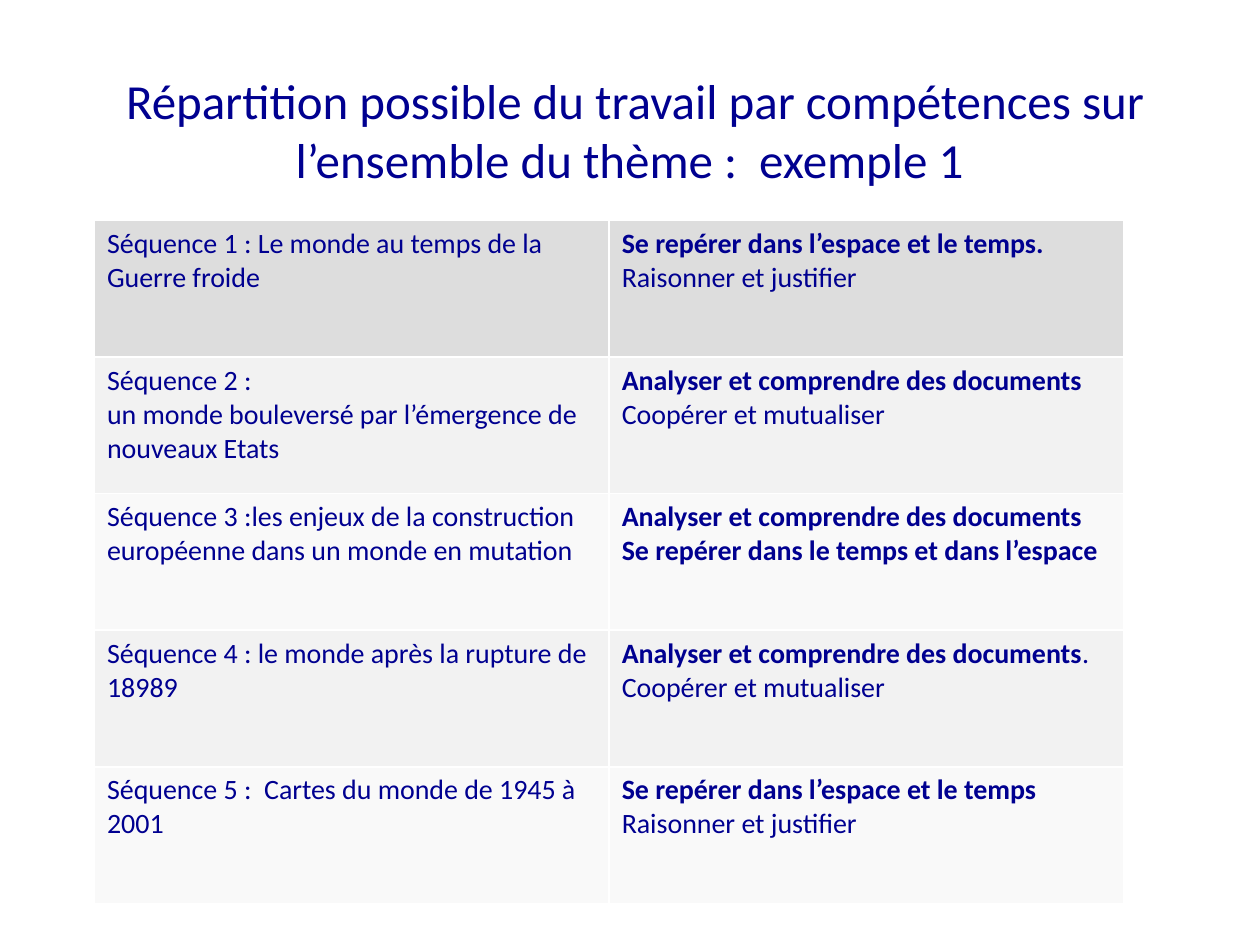
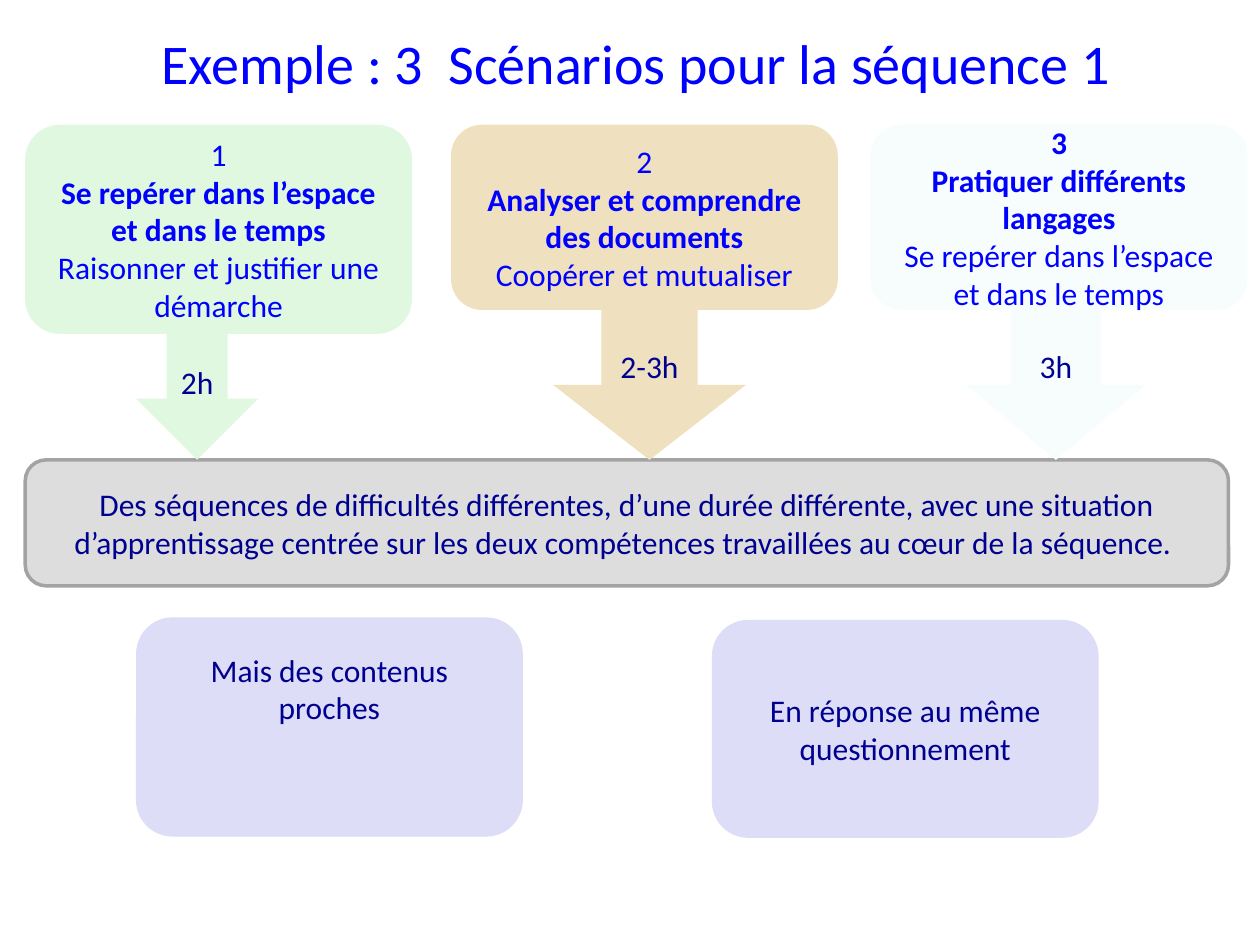
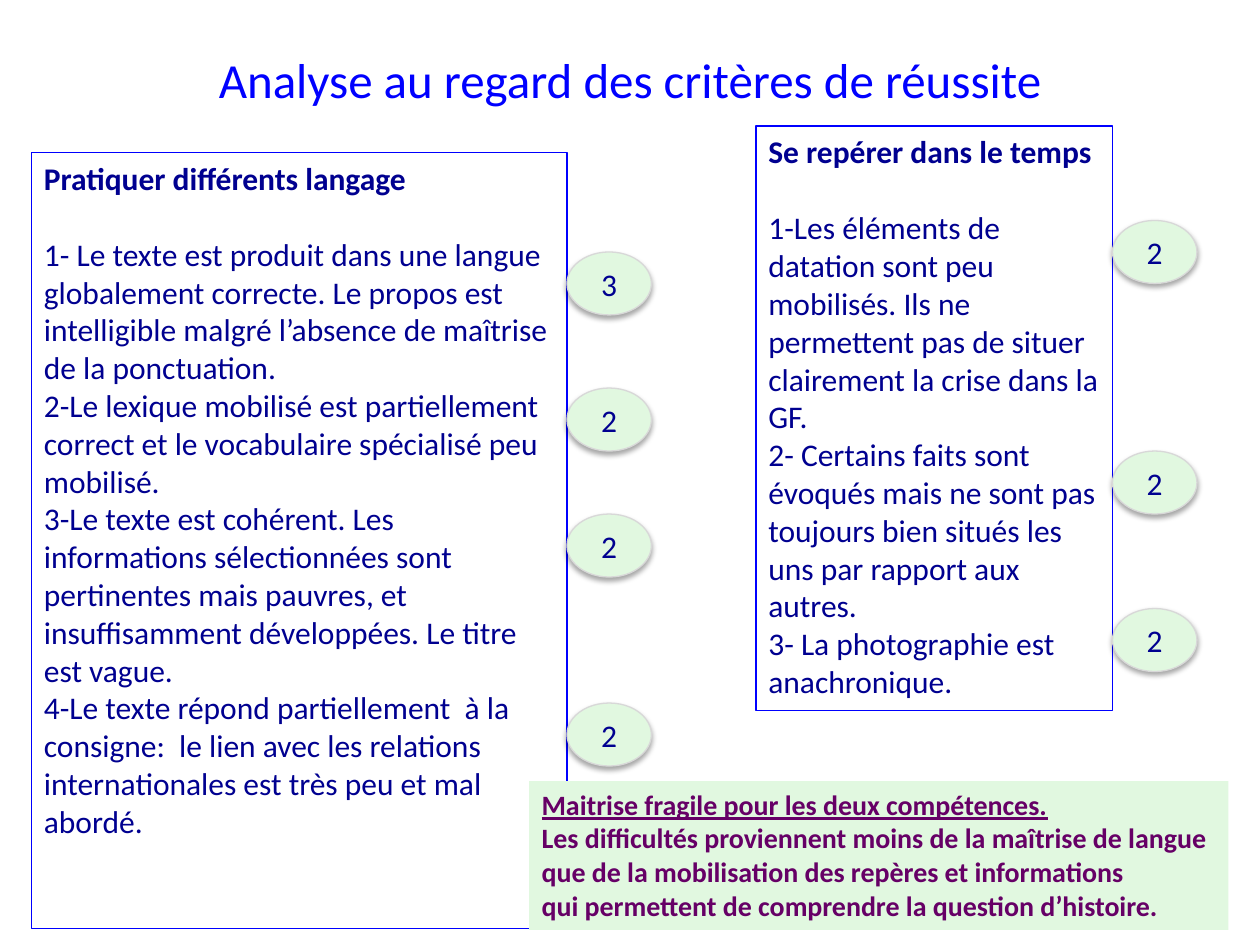
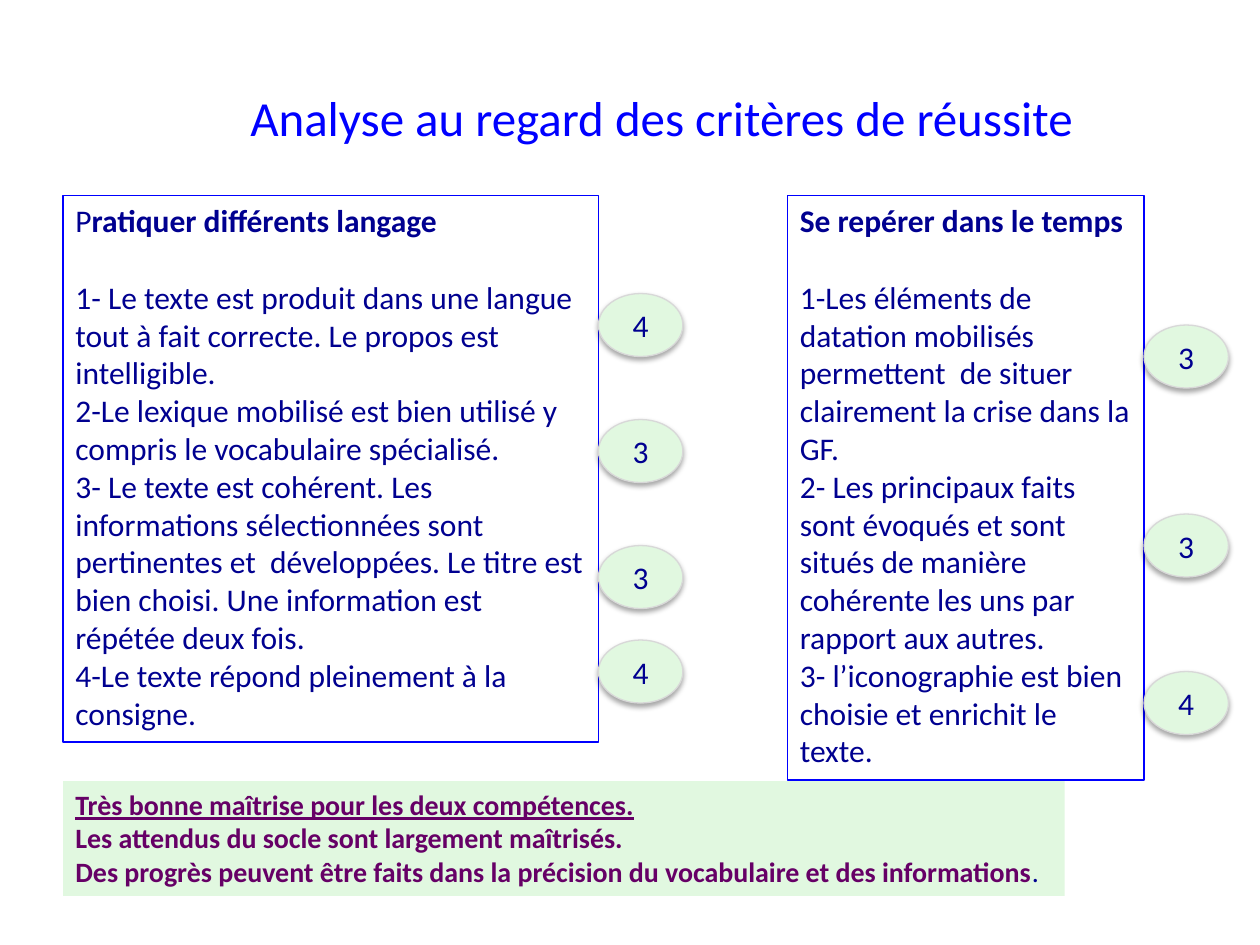
from lxml import etree
from pptx import Presentation
from pptx.dml.color import RGBColor
from pptx.enum.shapes import MSO_SHAPE
from pptx.enum.text import MSO_ANCHOR, MSO_AUTO_SIZE, PP_ALIGN
from pptx.oxml.ns import qn
from pptx.util import Inches, Pt

LEFT, CENTER = PP_ALIGN.LEFT, PP_ALIGN.CENTER
TOP, MIDDLE = MSO_ANCHOR.TOP, MSO_ANCHOR.MIDDLE
FIT_TEXT = MSO_AUTO_SIZE.SHAPE_TO_FIT_TEXT
ROUNDED, ARROW, OVAL = MSO_SHAPE.ROUNDED_RECTANGLE, MSO_SHAPE.DOWN_ARROW, MSO_SHAPE.OVAL

NAVY = RGBColor(0x00, 0x00, 0x90)
BLUE = RGBColor(0x00, 0x00, 0xFF)
PURPLE = RGBColor(0x66, 0x00, 0x66)
GREEN = RGBColor(0xE1, 0xF8, 0xE0)
SAND = RGBColor(0xEF, 0xE1, 0xBF)
ICE = RGBColor(0xF7, 0xFD, 0xFD)
LILAC = RGBColor(0xDD, 0xDD, 0xF7)
SILVER = RGBColor(0xDD, 0xDD, 0xDD)
GRAY = RGBColor(0xA3, 0xA3, 0xA3)
PALE_GRAY = RGBColor(0xD8, 0xD8, 0xD8)
ROW_DARK = RGBColor(0xF2, 0xF2, 0xF2)
ROW_LIGHT = RGBColor(0xF9, 0xF9, 0xF9)

BODY = {"name": "Calibri", "size": Pt(18), "bold": False, "color": NAVY}
TITLE = BODY | {"size": Pt(28), "color": BLUE}
CARD = BODY | {"color": BLUE}
CELL = BODY | {"size": Pt(16)}
VERDICT = CELL | {"bold": True, "color": PURPLE}
BOLD = {"bold": True}
HEADING_GAP = Pt(22)


def bold(text):
    return [(text, BOLD)]


# Shared text and shape helpers
def write(frame, paragraphs, base, align=LEFT):
    """Fill a frame; a paragraph is a string or a list of (text, changes) runs."""
    for index, content in enumerate(paragraphs):
        paragraph = frame.paragraphs[0] if index == 0 else frame.add_paragraph()
        paragraph.alignment = align
        runs = [(content, {})] if isinstance(content, str) else content
        for text, changes in runs:
            run = paragraph.add_run()
            run.text = text
            for key, value in (base | changes).items():
                if key == "color":
                    run.font.color.rgb = value
                else:
                    setattr(run.font, key, value)


def set_line(line, color, width):
    line.color.rgb = color
    line.width = Pt(width)


def add_text(slide, box, paragraphs, base, align=LEFT, anchor=TOP):
    text_box = slide.shapes.add_textbox(*map(Inches, box))
    frame = text_box.text_frame
    for key, value in {"word_wrap": True, "vertical_anchor": anchor}.items():
        setattr(frame, key, value)
    write(frame, paragraphs, base, align)
    return text_box


def add_block(slide, kind, box, fill, paragraphs, base=BODY):
    block = slide.shapes.add_shape(kind, *map(Inches, box))
    block.shadow.inherit = False
    block.fill.solid()
    block.fill.fore_color.rgb = fill
    block.line.fill.background()
    block.text_frame.word_wrap = True
    block.text_frame.vertical_anchor = MIDDLE
    write(block.text_frame, paragraphs, base, CENTER)
    return block


def add_soft_shadow(shape):
    effects = shape._element.spPr.find(qn("a:effectLst"))
    shadow = etree.SubElement(effects, qn("a:outerShdw"), blurRad=str(Pt(3.1)),
                              dist=str(Pt(1.8)), dir="5400000", rotWithShape="0")
    color = etree.SubElement(shadow, qn("a:srgbClr"), val="000000")
    etree.SubElement(color, qn("a:alpha"), val="35000")


def add_title(slide, box, text, **changes):
    add_text(slide, box, [text], TITLE | changes, CENTER, MIDDLE)


# Slide 1: sequences and skills
def add_sequence_table(slide, box, rows):
    grid = slide.shapes.add_table(len(rows), 2, *map(Inches, box)).table
    for index, row in enumerate(rows):
        grid.rows[index].height = Inches(box[3] / len(rows))
        fill = SILVER if index == 0 else (ROW_LIGHT, ROW_DARK)[index % 2]
        for column, paragraphs in enumerate(row):
            cell = grid.cell(index, column)
            cell.fill.solid()
            cell.fill.fore_color.rgb = fill
            write(cell.text_frame, paragraphs, CELL)


def build_sequences(slide):
    add_title(slide, (0.25, 0.3, 9.58, 1.45),
              "Répartition possible du travail par compétences sur "
              "l’ensemble du thème :  exemple 1 ", color=NAVY)
    documents = "Analyser et comprendre des documents"
    add_sequence_table(slide, (0.75, 1.75, 8.17, 5.42), [
        (["Séquence 1 : Le monde au temps de la Guerre froide"],
         [bold("Se repérer dans l’espace et le temps."), "Raisonner et justifier"]),
        (["Séquence 2 :", "un monde bouleversé par l’émergence de nouveaux Etats"],
         [bold(documents), "Coopérer et mutualiser"]),
        (["Séquence 3 :les enjeux de la construction européenne dans un monde en mutation"],
         [bold(documents), bold("Se repérer dans le temps et dans l’espace")]),
        (["Séquence 4 : le monde après la rupture de 18989"],
         [[(documents, BOLD), (".", {})], "Coopérer et mutualiser"]),
        (["Séquence 5 :  Cartes du monde de 1945 à 2001"],
         [bold("Se repérer dans l’espace et le temps"), "Raisonner et justifier"]),
    ])


# Slide 2: three scenarios leading to one summary
def add_scenario(slide, box, fill, skills, duration, arrow_left, arrow_width, arrow_end):
    left, top, _, height = box
    add_block(slide, ROUNDED, box, fill, skills, CARD)
    bottom = top + height
    add_block(slide, ARROW, (left + arrow_left, bottom, arrow_width, arrow_end - bottom),
              fill, [duration])


def build_scenarios(slide):
    add_title(slide, (0.5, 0, 9, 0.99), " Exemple : 3  Scénarios pour la séquence 1",
              size=Pt(32))
    card_top, summary_top = 0.99, 3.65
    space = "Se repérer dans l’espace et dans le temps"
    summary = add_block(slide, ROUNDED, (0.2, summary_top, 9.55, 1), SILVER, [
        "Des séquences de difficultés différentes, d’une durée différente, avec une "
        "situation d’apprentissage centrée sur les deux compétences travaillées au "
        "cœur de la séquence. "])
    set_line(summary.line, GRAY, 2)

    scenarios = [
        ((0.2, card_top, 3.07, 1.66), GREEN,
         ["1", bold(space), "Raisonner et justifier une démarche"], "2h", 0.88, 0.97),
        ((3.58, card_top, 3.07, 1.47), SAND,
         ["2", bold("Analyser et comprendre des documents"), "Coopérer et mutualiser"],
         "2-3h", 0.81, 1.53),
        ((6.91, card_top, 2.99, 1.47), ICE,
         [bold("3"), bold("Pratiquer différents langages"), space], "3h", 0.76, 1.42),
    ]
    for scenario in scenarios:
        add_scenario(slide, *scenario, summary_top)

    # Remarks under the summary
    contents = add_block(slide, ROUNDED, (1.08, 4.9, 3.07, 1.74), LILAC,
                         ["Mais des contenus proches"])
    contents.text_frame.margin_bottom = Inches(0.66)
    add_block(slide, ROUNDED, (5.65, 4.92, 3.07, 1.73), LILAC,
              ["En réponse au même questionnement"])


# Slides 3 and 4: criteria with their scores, and a verdict
def add_criteria(slide, box, heading, criteria, scores):
    left, top, width, _ = box
    panel = add_text(slide, box, [heading, *criteria], BODY)
    panel.text_frame.paragraphs[0].space_after = HEADING_GAP
    set_line(panel.line, BLUE, 0.75)
    for offset, score in scores:
        badge = add_block(slide, OVAL, (left + width, top + offset, 0.67, 0.5),
                          GREEN, [score])
        set_line(badge.line, PALE_GRAY, 0.75)
        add_soft_shadow(badge)


def add_verdict(slide, box, headline, lines):
    verdict = add_text(slide, box, [[(headline, {"underline": True})], *lines], VERDICT)
    verdict.fill.solid()
    verdict.fill.fore_color.rgb = GREEN
    verdict.text_frame.word_wrap = False
    verdict.text_frame.auto_size = FIT_TEXT


def build_analysis(slide, title_box, panels, verdict):
    add_title(slide, title_box, "Analyse au regard des critères de réussite")
    for panel in panels:
        add_criteria(slide, *panel)
    add_verdict(slide, *verdict)


TIME_HEADING = bold("Se repérer dans le temps")

FRAGILE_WORK = {
    "title_box": (0.25, 0, 9.5, 1.25),
    "panels": [
        ((0.25, 1.21, 4.25, 6.16), bold("Pratiquer différents langage"), [
            "1- Le texte est produit dans une langue globalement correcte. Le propos est "
            "intelligible malgré l’absence de maîtrise de la ponctuation.",
            "2-Le lexique mobilisé est partiellement correct et le vocabulaire spécialisé "
            "peu mobilisé.",
            "3-Le texte est cohérent. Les informations sélectionnées sont pertinentes mais "
            "pauvres, et insuffisamment développées. Le titre est vague.",
            "4-Le texte répond partiellement  à la consigne:  le lien avec les relations "
            "internationales est très peu et mal abordé.",
        ], [(0.79, "3"), (1.87, "2"), (2.87, "2"), (4.37, "2")]),
        ((6, 1, 2.83, 4.64), TIME_HEADING, [
            "1-Les éléments de datation sont peu mobilisés. Ils ne permettent pas de situer "
            "clairement la crise dans la GF.",
            "2- Certains faits sont évoqués mais ne sont pas toujours bien situés les uns "
            "par rapport aux autres.",
            "3- La photographie est anachronique.",
        ], [(0.75, "2"), (2.58, "2"), (3.83, "2")]),
    ],
    "verdict": ((4.2, 6.2, 5.55, 1.18), "Maitrise fragile pour les deux compétences.", [
        "Les difficultés proviennent moins de la maîtrise de langue",
        "que de la mobilisation des repères et informations",
        "qui permettent de comprendre la question d’histoire.",
    ]),
}

STRONG_WORK = {
    "title_box": (0.5, 0.3, 9.5, 1.25),
    "panels": [
        ((0.5, 1.55, 4.25, 4.34), [("P", {}), ("ratiquer différents langage", BOLD)], [
            "1- Le texte est produit dans une langue tout à fait correcte. Le propos est "
            "intelligible.",
            "2-Le lexique mobilisé est bien utilisé y compris le vocabulaire spécialisé.",
            "3- Le texte est cohérent. Les informations sélectionnées sont pertinentes et  "
            "développées. Le titre est bien choisi. Une information est répétée deux fois.",
            "4-Le texte répond pleinement à la consigne.",
        ], [(0.78, "4"), (1.78, "3"), (2.78, "3"), (3.53, "4")]),
        ((6.25, 1.55, 2.83, 4.64), TIME_HEADING, [
            "1-Les éléments de datation mobilisés  permettent  de situer clairement la "
            "crise dans la GF.",
            "2- Les principaux faits sont évoqués et sont situés de manière cohérente les "
            "uns par rapport aux autres.",
            "3- l’iconographie est bien choisie et enrichit le texte.",
        ], [(1.03, "3"), (2.53, "3"), (3.78, "4")]),
    ],
    "verdict": ((0.5, 6.2, 7.95, 0.91), "Très bonne maîtrise pour les deux compétences.", [
        "Les attendus du socle sont largement maîtrisés.",
        [("Des progrès peuvent être faits dans la précision du vocabulaire et des "
          "informations", {}), (".", {"color": NAVY, "bold": False})],
    ]),
}


def main():
    deck = Presentation()
    deck.slide_width, deck.slide_height = Inches(10), Inches(7.5)
    blank = deck.slide_layouts[6]
    build_sequences(deck.slides.add_slide(blank))
    build_scenarios(deck.slides.add_slide(blank))
    for work in (FRAGILE_WORK, STRONG_WORK):
        build_analysis(deck.slides.add_slide(blank), **work)
    deck.save("out.pptx")


if __name__ == "__main__":
    main()
